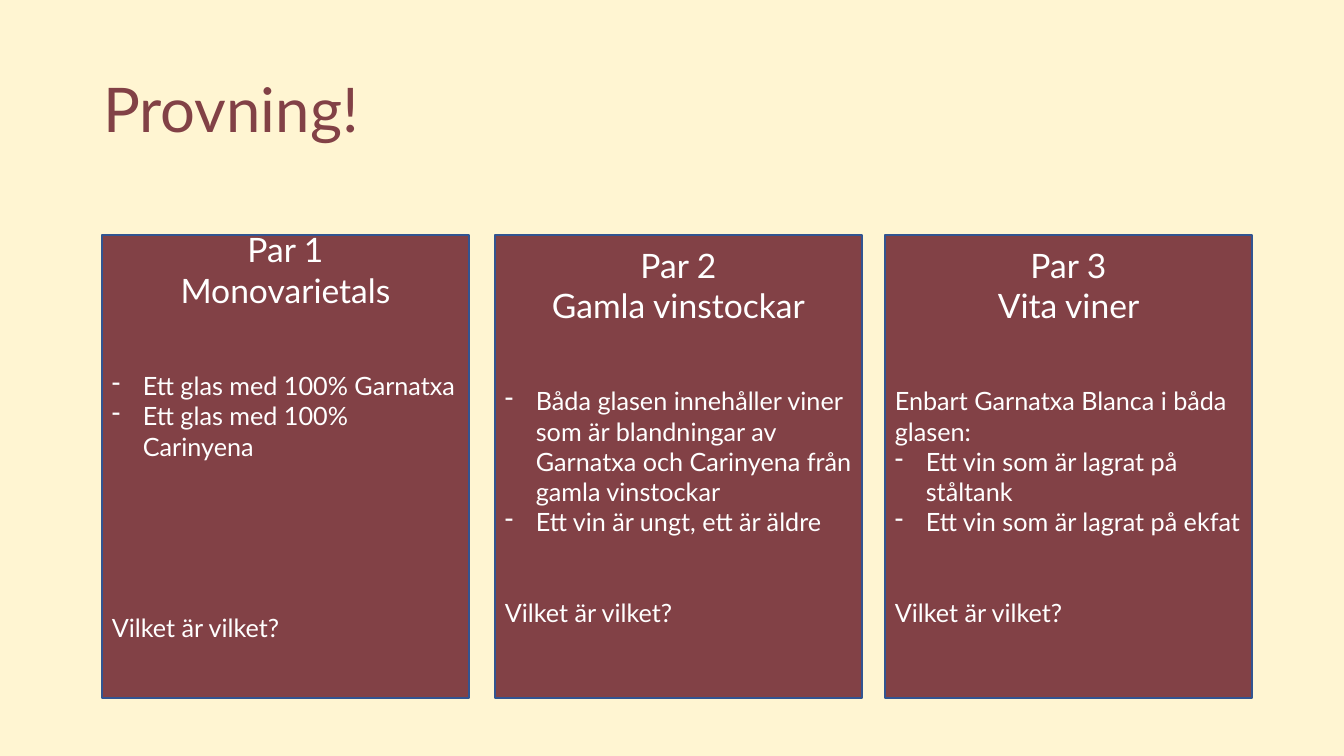
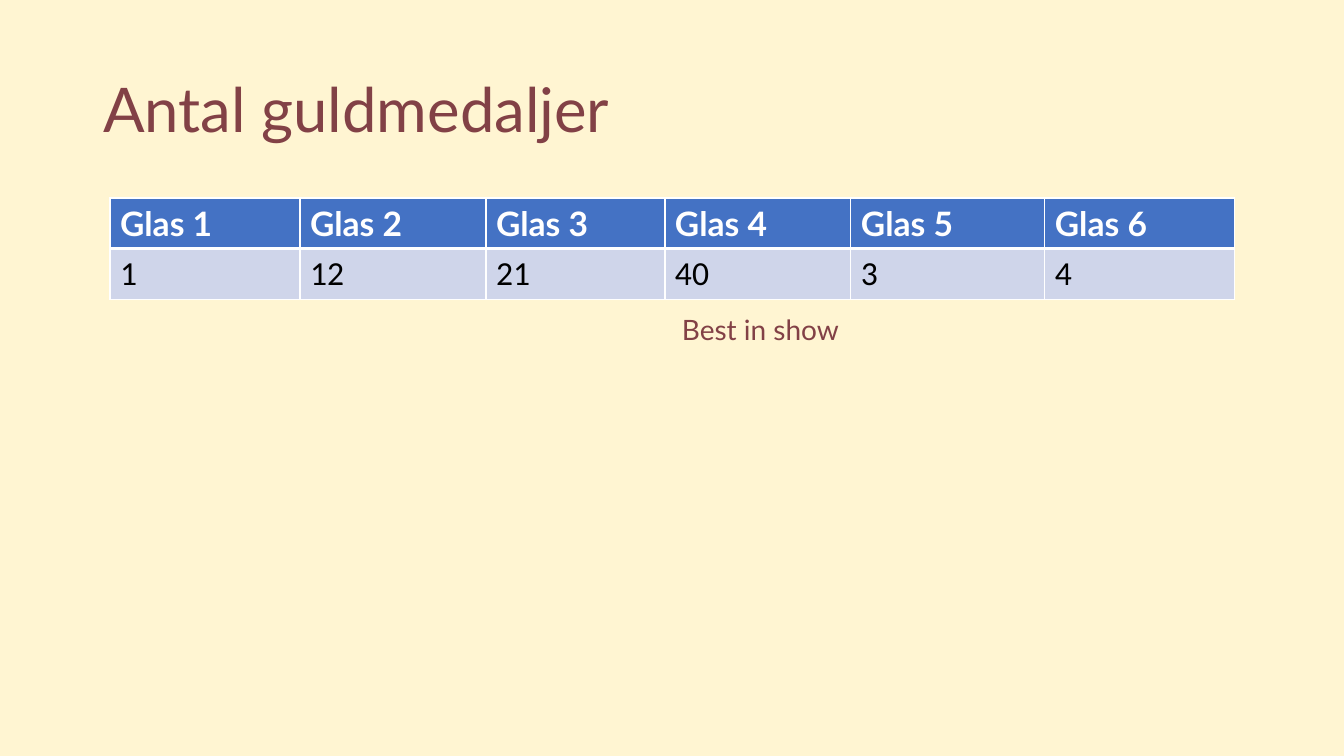
from pptx import Presentation
from pptx import util as u
from pptx.dml.color import RGBColor
from pptx.enum import shapes, text
from pptx.oxml.ns import qn
from lxml import etree

PX = 914400 / 100.8
CREAM, WINE, WHITE, BLACK = "FFF5D2", "824146", "FFFFFF", "000000"
NAVY, BLUE, PALE = "325491", "4472C4", "CFD5EA"
LEFT, MID = text.PP_ALIGN.LEFT, text.PP_ALIGN.CENTER

# One blank line of 18 pt text, in points
LINE = 21.6
HEAD, BODY, DASH = "head", "body", "dash"
# Each card: left edge, then paragraphs as (kind, words, blank lines above)
CARDS = [
    (102, [
        (HEAD, "Par 1", 0),
        (HEAD, "Monovarietals", 0),
        (DASH, "Ett glas med 100% Garnatxa", 2),
        (DASH, "Ett glas med 100% Carinyena", 0),
        (BODY, "Vilket är vilket?", 5),
    ]),
    (495, [
        (HEAD, "Par 2", 0),
        (HEAD, "Gamla vinstockar", 0),
        (DASH, "Båda glasen innehåller viner som är blandningar av "
               "Garnatxa och Carinyena från gamla vinstockar", 2),
        (DASH, "Ett vin är ungt, ett är äldre", 0),
        (BODY, "Vilket är vilket?", 2),
    ]),
    (885, [
        (HEAD, "Par 3", 0),
        (HEAD, "Vita viner", 0),
        (BODY, "Enbart Garnatxa Blanca i båda glasen:", 2),
        (DASH, "Ett vin som är lagrat på ståltank", 0),
        (DASH, "Ett vin som är lagrat på ekfat", 0),
        (BODY, "Vilket är vilket?", 2),
    ]),
]
STYLES = {
    HEAD: dict(size=24, align=MID),
    BODY: dict(size=18),
    DASH: dict(size=18, dash=True),
}
MEDALS = [("Glas 1", 1), ("Glas 2", 12), ("Glas 3", 21),
          ("Glas 4", 40), ("Glas 5", 3), ("Glas 6", 4)]
COLS = [190, 186, 179, 186, 194, 190]


def px(n):
    return u.Emu(round(n * PX))


def box(*sides):
    return [px(n) for n in sides]


def rgb(code):
    return RGBColor.from_string(code)


def write(para, words, size=24, font="Lato", color=WHITE, bold=False,
          align=LEFT, above=0, lead=None, dash=False):
    """Fill one paragraph with formatted text."""
    para.alignment = align
    para.space_before = u.Pt(above)
    if lead:
        para.line_spacing = lead
    if dash:
        props = para._p.get_or_add_pPr()
        props.set("marL", str(px(31)))
        props.set("indent", str(-px(31)))
        etree.SubElement(props, qn("a:buChar")).set("char", "-")
    run = para.add_run()
    run.text = words
    run.font.size = u.Pt(size)
    run.font.name = font
    run.font.bold = bold
    run.font.color.rgb = rgb(color)


def edge(cell, **widths):
    """Draw white cell borders; widths in points keyed by L, R, T, B."""
    props = cell._tc.get_or_add_tcPr()
    for at, side in enumerate("LRTB"):
        line = etree.Element(qn("a:ln" + side), w=str(u.Pt(widths.get(side, 1))))
        fill = etree.SubElement(line, qn("a:solidFill"))
        etree.SubElement(fill, qn("a:srgbClr"), val=WHITE)
        props.insert(at, line)


def setup():
    """Make the deck with its shared background and title place."""
    deck = Presentation()
    deck.slide_width, deck.slide_height = box(1344, 756)
    fill = deck.slide_master.background.fill
    fill.solid()
    fill.fore_color.rgb = rgb(CREAM)
    title = deck.slide_layouts[5].placeholders[0]
    title.left, title.top, title.width, title.height = box(93, 40, 1159, 146)
    title.text_frame.vertical_anchor = text.MSO_ANCHOR.MIDDLE
    return deck


def page(deck, title):
    slide = deck.slides.add_slide(deck.slide_layouts[5])
    write(slide.shapes.title.text_frame.paragraphs[0], title,
          size=44, color=WINE, lead=0.9)
    return slide


def card(slide, left, paras):
    rect = slide.shapes.add_shape(shapes.MSO_SHAPE.RECTANGLE,
                                  *box(left, 235, 367, 463))
    rect.shadow.inherit = False
    rect.fill.solid()
    rect.fill.fore_color.rgb = rgb(WINE)
    rect.line.color.rgb = rgb(NAVY)
    rect.line.width = u.Pt(1)
    frame = rect.text_frame
    frame.word_wrap = True
    frame.vertical_anchor = text.MSO_ANCHOR.MIDDLE
    frame.margin_top, frame.margin_bottom = box(5, 66)
    for i, (kind, words, gap) in enumerate(paras):
        para = frame.add_paragraph() if i else frame.paragraphs[0]
        write(para, words, above=gap * LINE, **STYLES[kind])


def table(slide):
    grid = slide.shapes.add_table(2, len(MEDALS),
                                  *box(110, 198, sum(COLS), 100)).table
    rows = [
        (BLUE, dict(bold=True), dict(B=3)),
        (PALE, dict(font="Calibri", color=BLACK), dict(T=3)),
    ]
    for c, (pair, width) in enumerate(zip(MEDALS, COLS)):
        grid.columns[c].width = px(width)
        for r, (tint, style, rule) in enumerate(rows):
            cell = grid.cell(r, c)
            cell.fill.solid()
            cell.fill.fore_color.rgb = rgb(tint)
            edge(cell, **rule)
            write(cell.text_frame.paragraphs[0], str(pair[r]), **style)


def main():
    deck = setup()
    tasting = page(deck, "Provning!")
    for left, paras in CARDS:
        card(tasting, left, paras)

    medals = page(deck, "Antal guldmedaljer")
    table(medals)
    label = medals.shapes.add_textbox(*box(672, 308, 190, 44)).text_frame
    label.word_wrap = True
    write(label.paragraphs[0], "Best in show", size=20, color=WINE)
    deck.save("out.pptx")


if __name__ == "__main__":
    main()
